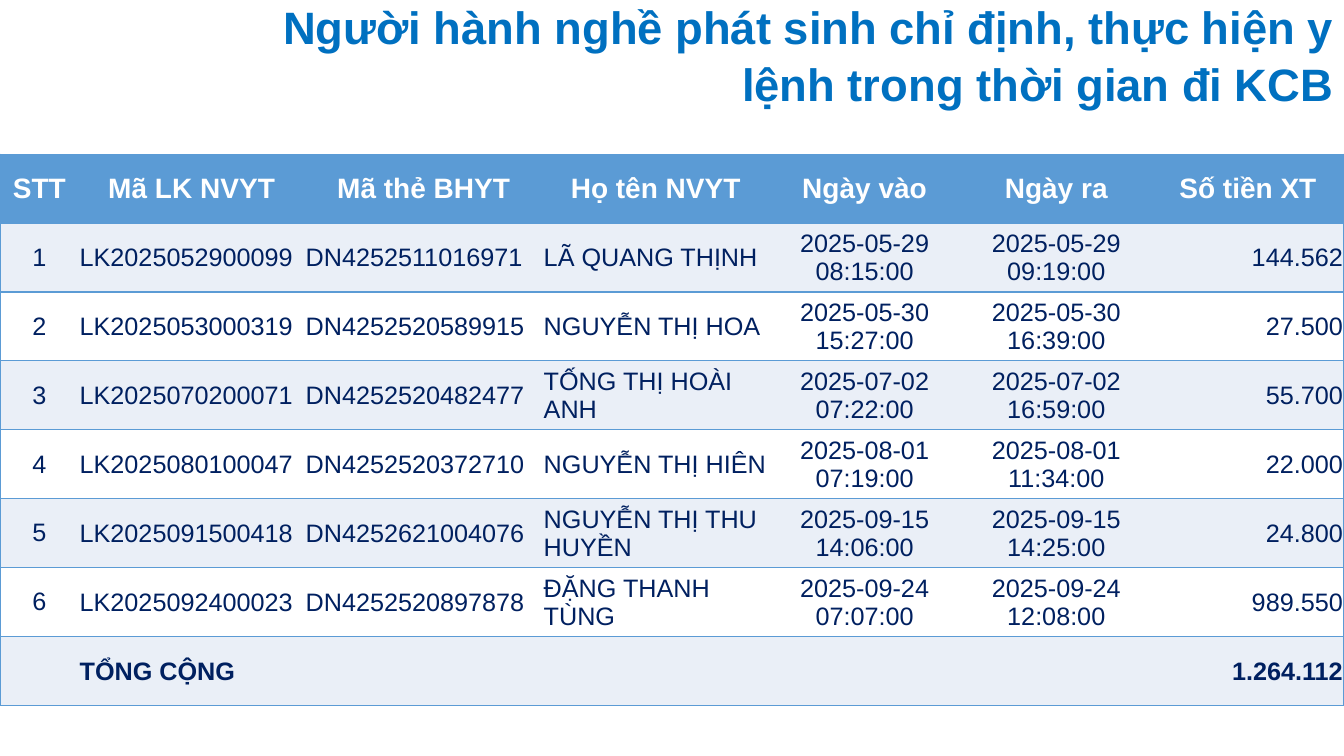
from dataclasses import dataclass
from lxml.etree import SubElement
from pptx import Presentation
from pptx.dml.color import RGBColor
from pptx.enum.text import MSO_ANCHOR, PP_ALIGN
from pptx.oxml.ns import qn
from pptx.util import Inches, Pt

TITLE = "Người hành nghề phát sinh chỉ định, thực hiện y lệnh trong thời gian đi KCB"
HEADINGS = ["STT", "Mã LK NVYT", "Mã thẻ BHYT", "Họ tên NVYT", "Ngày vào", "Ngày ra", "Số tiền XT"]
VISITS = [
    ("1", "LK2025052900099", "DN4252511016971", "LÃ QUANG THỊNH", "2025-05-29 08:15:00", "2025-05-29 09:19:00", "144.562"),
    ("2", "LK2025053000319", "DN4252520589915", "NGUYỄN THỊ HOA", "2025-05-30 15:27:00", "2025-05-30 16:39:00", "27.500"),
    ("3", "LK2025070200071", "DN4252520482477", "TỐNG THỊ HOÀI ANH", "2025-07-02 07:22:00", "2025-07-02 16:59:00", "55.700"),
    ("4", "LK2025080100047", "DN4252520372710", "NGUYỄN THỊ HIÊN", "2025-08-01 07:19:00", "2025-08-01 11:34:00", "22.000"),
    ("5", "LK2025091500418", "DN4252621004076", "NGUYỄN THỊ THU HUYỀN", "2025-09-15 14:06:00", "2025-09-15 14:25:00", "24.800"),
    ("6", "LK2025092400023", "DN4252520897878", "ĐẶNG THANH TÙNG", "2025-09-24 07:07:00", "2025-09-24 12:08:00", "989.550"),
]
TOTAL = ("", "TỔNG CỘNG", "", "", "", "", "1.264.112")
ROWS = [HEADINGS, *VISITS, TOTAL]
COLUMN_WEIGHTS = [0.78, 2.24, 2.36, 2.24, 1.9, 1.9, 1.9]
LEFT, CENTER, RIGHT = PP_ALIGN.LEFT, PP_ALIGN.CENTER, PP_ALIGN.RIGHT
COLUMN_ALIGNMENT = [CENTER, LEFT, LEFT, LEFT, CENTER, CENTER, RIGHT]
PLAIN_TABLE_STYLE = "{2D5ABB26-0587-4C30-8999-92F81FD0307C}"


@dataclass(frozen=True)
class Theme:
    font: str = "Arial"
    title: str = "0070C0"
    accent: str = "5B9BD5"
    band: str = "EAEFF7"
    white: str = "FFFFFF"
    body: str = "002060"
    title_size: float = 32.4
    heading_size: int = 20
    body_size: int = 18
    border_width: int = 1


THEME = Theme()


def style(paragraph, size, color, bold, alignment):
    paragraph.alignment = alignment
    font = paragraph.font
    font.name, font.size, font.bold = THEME.font, Pt(size), bold
    font.color.rgb = RGBColor.from_string(color)


def add_borders(cell, sides):
    properties = cell._tc.get_or_add_tcPr()
    for position, side in enumerate(sides):
        line = SubElement(properties, qn(f"a:ln{side}"), w=str(Pt(THEME.border_width)))
        properties.remove(line)
        properties.insert(position, line)
        fill = SubElement(line, qn("a:solidFill"))
        SubElement(fill, qn("a:srgbClr"), val=THEME.accent)


def add_title(page, deck):
    box = page.shapes.title
    box.left, box.top = int(deck.slide_width * 0.2), Inches(-0.1)
    box.width, box.height = deck.slide_width - box.left, Inches(1.27)
    frame = box.text_frame
    frame.text = TITLE
    frame.word_wrap = True
    frame.vertical_anchor = MSO_ANCHOR.MIDDLE
    paragraph = frame.paragraphs[0]
    style(paragraph, THEME.title_size, THEME.title, True, RIGHT)
    paragraph.line_spacing = 1.04


def fill_cell(cell, text, row, column):
    heading = row == 0
    cell.text = text
    cell.vertical_anchor = MSO_ANCHOR.MIDDLE
    if not heading and column > 0:
        cell.margin_left = cell.margin_right = cell.margin_top = Inches(0.01)
        cell.margin_bottom = 0
    cell.fill.solid()
    color = THEME.accent if heading else THEME.band if row % 2 else THEME.white
    cell.fill.fore_color.rgb = RGBColor.from_string(color)
    style(
        cell.text_frame.paragraphs[0],
        THEME.heading_size if heading else THEME.body_size,
        THEME.white if heading else THEME.body,
        heading or row == len(ROWS) - 1,
        CENTER if heading else COLUMN_ALIGNMENT[column],
    )
    outer = {0: "L", len(HEADINGS) - 1: "R"}
    add_borders(cell, outer.get(column, "") + "TB")


def add_visit_table(page, deck):
    frame = page.shapes.add_table(
        len(ROWS), len(HEADINGS), 0, Inches(1.53), deck.slide_width, Inches(5.47)
    )
    table = frame.table
    table.first_row = table.horz_banding = False
    table._tbl.tblPr.find(qn("a:tableStyleId")).text = PLAIN_TABLE_STYLE
    for column, weight in zip(table.columns, COLUMN_WEIGHTS):
        column.width = int(deck.slide_width * weight / sum(COLUMN_WEIGHTS))
    for row, values in enumerate(ROWS):
        for column, text in enumerate(values):
            fill_cell(table.cell(row, column), text, row, column)


def main():
    deck = Presentation()
    deck.slide_width, deck.slide_height = Inches(13.33), Inches(7.5)
    page = deck.slides.add_slide(deck.slide_layouts[5])
    add_visit_table(page, deck)
    add_title(page, deck)
    deck.save("out.pptx")


if __name__ == "__main__":
    main()
